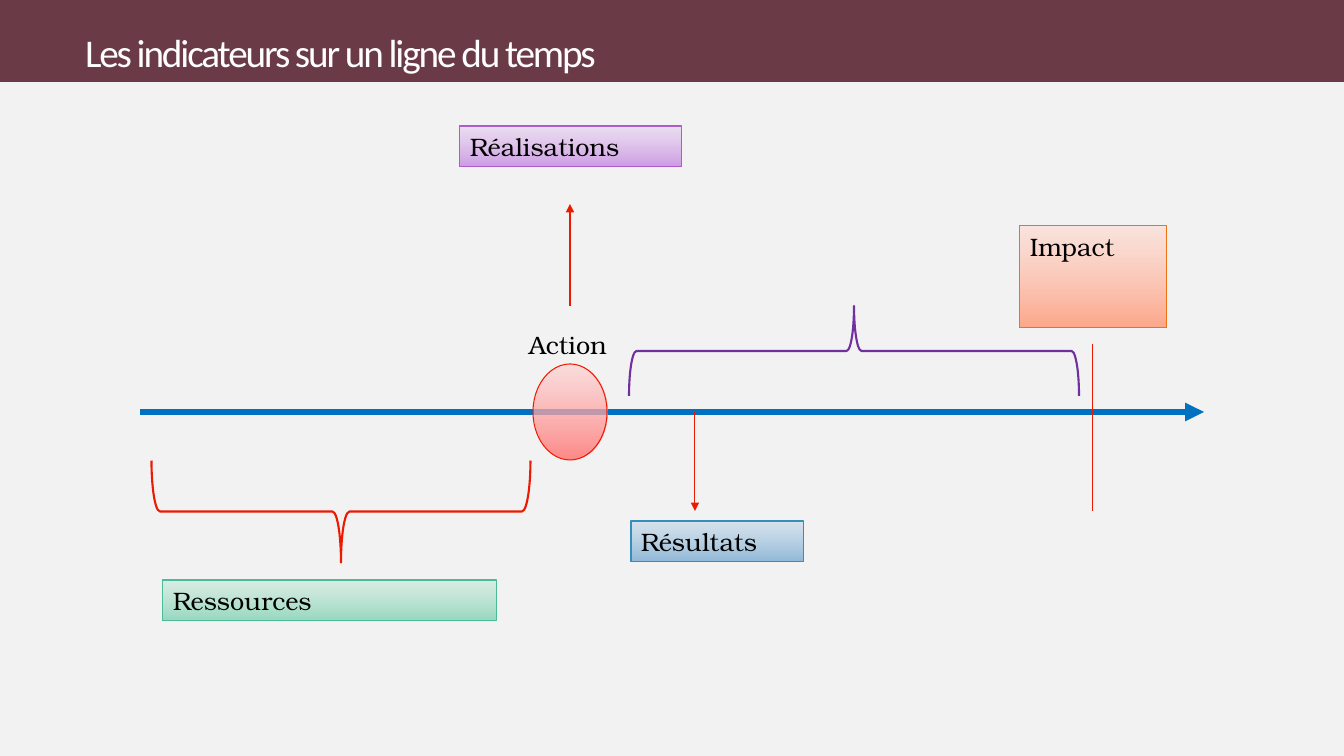
from dataclasses import dataclass
from typing import Optional

import lxml.etree
import pptx
import pptx.dml.color
import pptx.enum.shapes
import pptx.enum.text
import pptx.oxml.ns
import pptx.util

PX = 914400 / 100.8
SERIF = "TeX Gyre Bonum"
RED, BLUE, PURPLE = "ED1A02", "0070C0", "7030A0"
SHAPES = pptx.enum.shapes.MSO_SHAPE
qn = pptx.oxml.ns.qn


@dataclass
class Stage:
    text: str
    box: tuple[int, int, int, int]
    top: str
    bottom: str
    border: str
    kind: int = SHAPES.RECTANGLE


@dataclass
class Line:
    start: tuple[int, int]
    end: tuple[int, int]
    color: str = RED
    width: float = 0.75
    arrow: bool = True


@dataclass
class Brace:
    box: tuple[int, int, int, int]
    rotation: int
    color: str


AXIS_Y = 412
LINES = [
    Line((140, AXIS_Y), (1204, AXIS_Y), BLUE, 4.5),
    Line((570, 306), (570, 204)),
    Line((695, AXIS_Y), (695, 511)),
    Line((1093, 344), (1093, 511), arrow=False),
]
STAGES = [
    Stage("", (533, 364, 74, 96), "FFCECD", "FF807F", RED, SHAPES.OVAL),
    Stage("Ressources", (163, 580, 334, 41), "CAEADD", "8ED6BB", "4CBB98"),
    Stage("Réalisations", (460, 126, 222, 41), "E7D1F1", "CA94E2", "AD5CCB"),
    Stage("Résultats", (631, 521, 173, 41), "C6D9EA", "88B4D6", "388EBB"),
    Stage("Impact", (1020, 226, 147, 102), "FFDAD0", "FFA182", "F17214"),
]
BRACES = [
    Brace((290, 322, 102, 379), 270, RED),
    Brace((809, 126, 90, 450), 90, PURPLE),
]


def px(n: int) -> int:
    return round(n * PX)


def rgb(color: str) -> pptx.dml.color.RGBColor:
    return pptx.dml.color.RGBColor.from_string(color)


def set_alpha(element, percents: list[int]) -> None:
    for clr, percent in zip(element.iter(qn("a:srgbClr")), percents):
        lxml.etree.SubElement(clr, qn("a:alpha")).set("val", str(percent * 1000))


def write(s, text: str, *, size: float = 18, font: str = SERIF, color: str = "000000",
          spacing: Optional[int] = None, line_spacing: Optional[float] = None,
          inset: Optional[int] = None, middle: bool = False) -> None:
    tf = s.text_frame
    tf.word_wrap = True
    anchors = pptx.enum.text.MSO_ANCHOR
    tf.vertical_anchor = anchors.MIDDLE if middle else anchors.TOP
    if inset is not None:
        tf.margin_left = tf.margin_right = tf.margin_top = tf.margin_bottom = px(inset)
    p = tf.paragraphs[0]
    p.alignment = pptx.enum.text.PP_ALIGN.LEFT
    if line_spacing is not None:
        p.line_spacing = line_spacing
    r = p.add_run()
    r.text = text
    r.font.size = pptx.util.Pt(size)
    r.font.name = font
    r.font.color.rgb = rgb(color)
    if spacing is not None:
        r.font._element.set("spc", str(spacing))


def add_shape(slide, kind: int, box: tuple[int, int, int, int]):
    s = slide.shapes.add_shape(kind, *map(px, box))
    s.shadow.inherit = False
    return s


def add_banner(slide) -> None:
    s = add_shape(slide, SHAPES.RECTANGLE, (0, 0, 1344, 82))
    s.fill.solid()
    s.fill.fore_color.rgb = rgb("541D2B")
    set_alpha(s.element.spPr, [86])
    s.line.fill.background()


def add_text(slide, text: str, box: tuple[int, int, int, int], **style) -> None:
    write(slide.shapes.add_textbox(*map(px, box)), text, **style)


def add_line(slide, line: Line) -> None:
    s = slide.shapes.add_connector(pptx.enum.shapes.MSO_CONNECTOR.STRAIGHT,
                                   *map(px, line.start + line.end))
    s.line.color.rgb = rgb(line.color)
    s.line.width = pptx.util.Pt(line.width)
    sp = s._element.spPr
    if line.arrow:
        lxml.etree.SubElement(sp.find(qn("a:ln")), qn("a:tailEnd")).set("type", "triangle")
    lxml.etree.SubElement(sp, qn("a:effectLst"))


def add_stage(slide, stage: Stage) -> None:
    s = add_shape(slide, stage.kind, stage.box)
    s.fill.gradient()
    s.fill.gradient_angle = 270
    for stop, color in zip(s.fill.gradient_stops, (stage.top, stage.bottom)):
        stop.color.rgb = rgb(color)
    set_alpha(s.element.spPr, [60, 92])
    s.line.color.rgb = rgb(stage.border)
    s.line.width = pptx.util.Pt(0.75)
    if stage.text:
        write(s, stage.text)


def add_brace(slide, brace: Brace) -> None:
    s = add_shape(slide, SHAPES.LEFT_BRACE, brace.box)
    s.rotation = brace.rotation
    s.fill.background()
    s.line.color.rgb = rgb(brace.color)
    s.line.width = pptx.util.Pt(1.5)


def main() -> None:
    prs = pptx.Presentation()
    prs.slide_width, prs.slide_height = px(1344), px(756)
    slide = prs.slides.add_slide(prs.slide_layouts[6])
    slide.background.fill.solid()
    slide.background.fill.fore_color.rgb = rgb("F2F2F2")
    add_banner(slide)
    add_text(slide, "Les indicateurs sur un ligne du temps", (60, 2, 1139, 108),
             size=28, font="Calibri", color="FFFEFF", spacing=-150,
             line_spacing=0.85, inset=25, middle=True)
    for line in LINES:
        add_line(slide, line)
    for stage in STAGES:
        add_stage(slide, stage)
    add_text(slide, "Action", (519, 324, 111, 40))
    for brace in BRACES:
        add_brace(slide, brace)
    prs.save("out.pptx")


if __name__ == "__main__":
    main()
